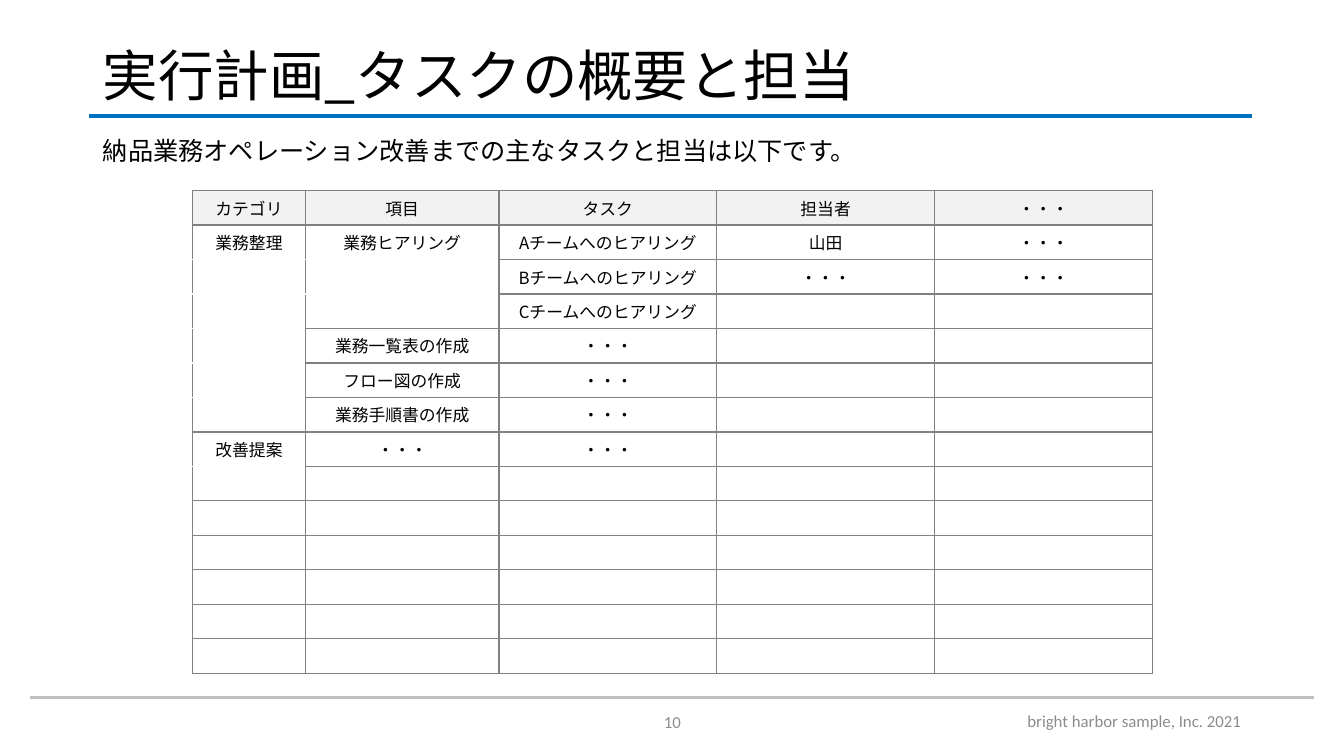
import pptx
import pptx.dml.color
import pptx.enum.shapes
import pptx.enum.text
import pptx.oxml
import pptx.oxml.ns
import pptx.util

Inches, Pt = pptx.util.Inches, pptx.util.Pt
ALIGN = pptx.enum.text.PP_ALIGN
MIDDLE = pptx.enum.text.MSO_ANCHOR.MIDDLE
TOP = pptx.enum.text.MSO_ANCHOR.TOP
JAPANESE, LATIN = "Noto Sans CJK JP", "Calibri"
BLACK, WHITE, GREY, HEADER_FILL = "000000", "FFFFFF", "808080", "F2F2F2"
FOOTER_GREY, RULE_GREY, RULE_BLUE = "8C8C8C", "BFBFBF", "0070C0"

COLUMN_WIDTHS = [1.12, 1.92, 2.16, 2.16, 2.16]
ROW_COUNT = 14
DOTS = "・・・"
TASKS = [
    ["カテゴリ", "項目", "タスク", "担当者", DOTS],
    ["業務整理", "業務ヒアリング", "Aチームへのヒアリング", "山田", DOTS],
    ["", "", "Bチームへのヒアリング", DOTS, DOTS],
    ["", "", "Cチームへのヒアリング"],
    ["", "業務一覧表の作成", DOTS],
    ["", "フロー図の作成", DOTS],
    ["", "業務手順書の作成", DOTS],
    ["改善提案", DOTS, DOTS],
]
# Column, first row and last row of each group without inner rules
GROUPS = [(0, 1, 6), (1, 1, 3), (0, 7, 8)]


def rgb(colour):
    return pptx.dml.color.RGBColor.from_string(colour)


def add_xml(parent, xml):
    parent.append(pptx.oxml.parse_xml(
        xml.replace(" ", f" {pptx.oxml.ns.nsdecls('a')} ", 1)))


def write(paragraph, text, size, font, colour, align):
    paragraph.alignment = align
    run = paragraph.add_run()
    run.text = text
    run.font.size = Pt(size)
    run.font.name = font
    run.font.color.rgb = rgb(colour)
    add_xml(run._r.get_or_add_rPr(), f'<a:ea typeface="{font}"/>')


def add_rule(slide, left, right, y, colour, width):
    rule = slide.shapes.add_connector(
        pptx.enum.shapes.MSO_CONNECTOR.STRAIGHT,
        Inches(left), Inches(y), Inches(right), Inches(y))
    rule.line.color.rgb = rgb(colour)
    rule.line.width = Pt(width)
    add_xml(rule._element.spPr, "<a:effectLst />")


def fill_placeholder(placeholder, box, text, size, anchor, space_before):
    placeholder.left, placeholder.top, placeholder.width, placeholder.height = map(Inches, box)
    frame = placeholder.text_frame
    frame.word_wrap = True
    frame.auto_size = pptx.enum.text.MSO_AUTO_SIZE.NONE
    frame.vertical_anchor = anchor
    paragraph = frame.paragraphs[0]
    paragraph.line_spacing = 0.9
    paragraph.space_before = Pt(space_before)
    write(paragraph, text, size, JAPANESE, BLACK, ALIGN.LEFT)
    properties = paragraph._p.get_or_add_pPr()
    properties.set("marL", "0")
    properties.set("indent", "0")
    add_xml(properties, "<a:buNone />")


def add_heading(slide, left, top, width):
    title, lead = slide.placeholders
    fill_placeholder(title, (left, top, width, 0.75),
                     "実行計画_タスクの概要と担当", 39.6, MIDDLE, 0)
    fill_placeholder(lead, (left, top + 0.93, width, 0.37),
                     "納品業務オペレーション改善までの主なタスクと担当は以下です。", 18, TOP, 10)
    add_rule(slide, left - 0.04, left + width, top + 0.75, RULE_BLUE, 3)


def add_footer(slide, left, top, right):
    add_rule(slide, left, right, top, RULE_GREY, 2)
    notes = [("bright harbor sample, Inc. 2021", 8.3, 0.03, 4.11, ALIGN.RIGHT),
             ("10", 5.17, 0.04, 3, ALIGN.CENTER)]
    for text, note_left, drop, width, align in notes:
        note = slide.shapes.add_textbox(
            Inches(note_left), Inches(top + drop), Inches(width), Inches(0.4))
        note.text_frame.word_wrap = True
        note.text_frame.vertical_anchor = MIDDLE
        write(note.text_frame.paragraphs[0], text, 12, LATIN, FOOTER_GREY, align)


def border_colours(row, column):
    """Colours of the left, right, top and bottom edges of a cell."""
    top = bottom = GREY
    for group_column, first, last in GROUPS:
        if column == group_column and first <= row <= last:
            top = GREY if row == first else WHITE
            bottom = GREY if row == last else WHITE
    return {"lnL": GREY, "lnR": GREY, "lnT": top, "lnB": bottom}


def format_cell(cell, row, column):
    # Borders come before the fill in the cell properties
    for edge, colour in border_colours(row, column).items():
        add_xml(cell._tc.get_or_add_tcPr(),
                f'<a:{edge} w="12700"><a:solidFill><a:srgbClr val="{colour}"/>'
                f'</a:solidFill></a:{edge}>')
    cell.fill.solid()
    cell.fill.fore_color.rgb = rgb(HEADER_FILL if row == 0 else WHITE)
    paragraph = cell.text_frame.paragraphs[0]
    text = TASKS[row][column] if row < len(TASKS) and column < len(TASKS[row]) else ""
    if text:
        write(paragraph, text, 12, JAPANESE, BLACK, ALIGN.CENTER)
    else:
        # Keeps empty rows as low as the others
        add_xml(paragraph._p, '<a:endParaRPr sz="1200"/>')


def add_task_table(slide, left, top, width, height):
    table = slide.shapes.add_table(
        ROW_COUNT, len(COLUMN_WIDTHS),
        Inches(left), Inches(top), Inches(width), Inches(height)).table
    table.first_row = table.horz_banding = False
    for column, column_width in zip(table.columns, COLUMN_WIDTHS):
        column.width = Inches(column_width)
    for row_index, row in enumerate(table.rows):
        row.height = Inches(height / ROW_COUNT)
        for column_index, cell in enumerate(row.cells):
            format_cell(cell, row_index, column_index)


def main():
    deck = pptx.Presentation()
    deck.slide_width, deck.slide_height = Inches(13.33), Inches(7.5)
    slide = deck.slides.add_slide(deck.slide_layouts[1])
    add_heading(slide, 0.92, 0.4, 11.5)
    add_task_table(slide, 1.91, 1.89, sum(COLUMN_WIDTHS), 4.79)
    add_footer(slide, 0.3, 6.92, 13.03)
    deck.save("out.pptx")


if __name__ == "__main__":
    main()
